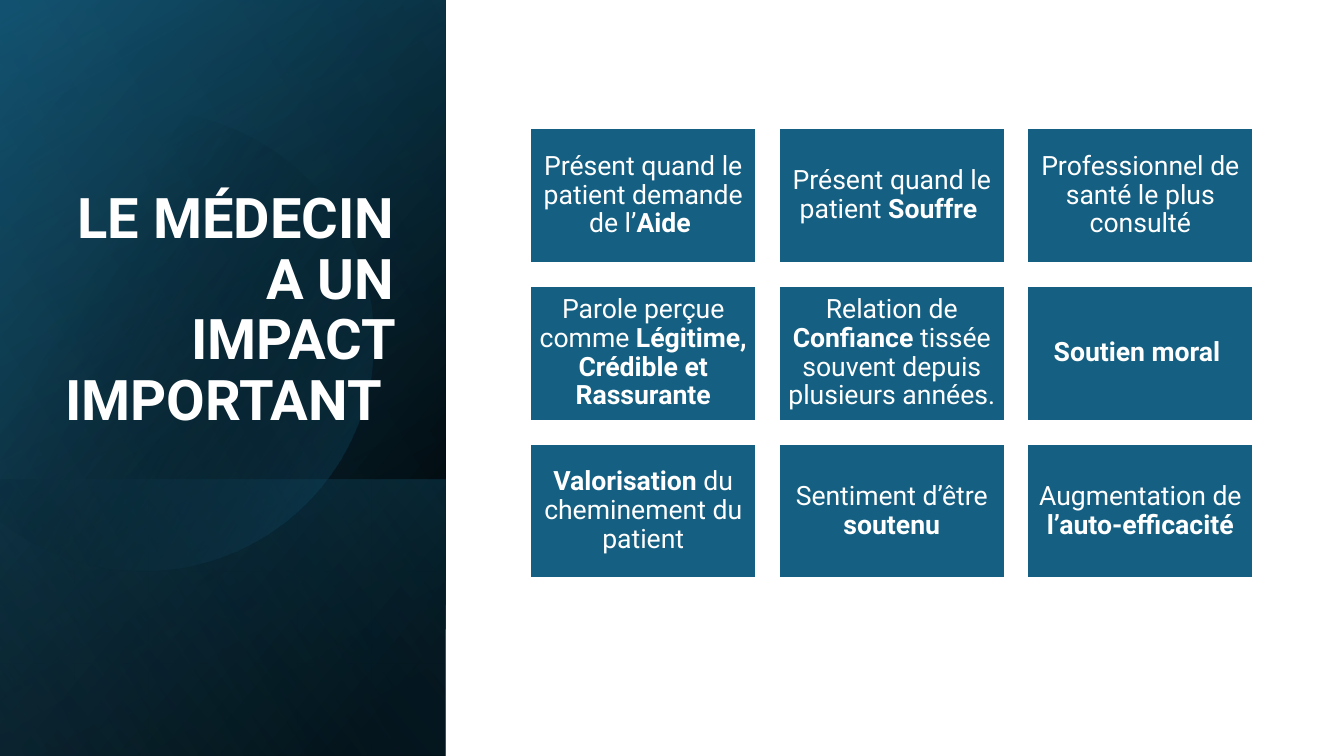
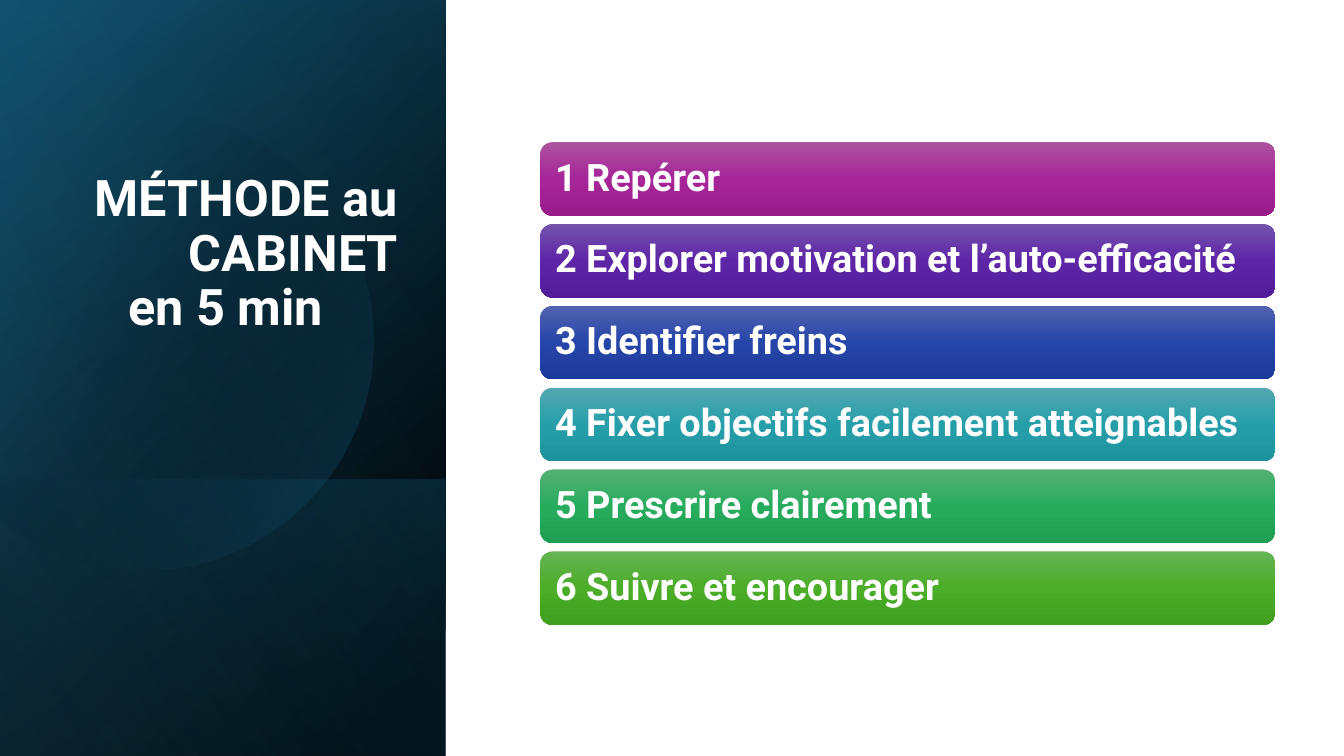
import math
from dataclasses import dataclass

from pptx import Presentation
from pptx.dml.color import RGBColor
from pptx.enum.shapes import MSO_SHAPE
from pptx.enum.text import MSO_ANCHOR, MSO_AUTO_SIZE, PP_ALIGN
from pptx.oxml import parse_xml
from pptx.oxml.ns import nsdecls
from pptx.util import Inches, Pt

RECTANGLE = MSO_SHAPE.RECTANGLE
ROUNDED = MSO_SHAPE.ROUNDED_RECTANGLE
MIDDLE = MSO_ANCHOR.MIDDLE
BOTTOM = MSO_ANCHOR.BOTTOM
NO_AUTOFIT = MSO_AUTO_SIZE.NONE
LEFT, CENTER, RIGHT = PP_ALIGN.LEFT, PP_ALIGN.CENTER, PP_ALIGN.RIGHT
TITLE_ONLY = 5


@dataclass(frozen=True)
class Theme:
    font: str = "Roboto"
    white: str = "FFFFFF"
    black: str = "000000"
    teal: str = "156082"
    deep_teal: str = "104862"
    sky: str = "46B1E1"
    impact_title: int = 40
    method_title: int = 36
    card_size: int = 19
    step_size: int = 27
    line_spacing: float = 0.9


THEME = Theme()
PAGE_WIDTH, PAGE_HEIGHT = 13.33, 7.5
PANEL_WIDTH = 4.42

BASE_BANDS = [
    (7.5, [(8, THEME.black, 100), (100, THEME.deep_teal, 100)], 50),
    (7.5, [(0, THEME.black, 0), (99, THEME.teal, 46)], 30),
    (2.74, [(2, THEME.teal, 29), (100, THEME.black, 30)], 130),
]
TOP_BAND = (7.5, [(0, THEME.black, 0), (99, THEME.sky, 11)], 120)
DISC_STOPS = [(29, THEME.black, 0), (100, THEME.teal, 43)]
DISC_CENTER, DISC_RADIUS = (1.42, 3.38), 2.28

CARDS = [
    [("Présent quand le patient demande de l’", False), ("Aide ", True)],
    [("Présent quand le patient ", False), ("Souffre ", True)],
    [("Professionnel de santé le plus consulté", False)],
    [("Parole perçue comme ", False), ("Légitime, Crédible et Rassurante", True)],
    [("Relation de ", False), ("Confiance", True),
     (" tissée souvent depuis plusieurs années.", False)],
    [("Soutien moral ", True)],
    [("Valorisation", True), (" du cheminement du patient", False)],
    [("Sentiment d’être ", False), ("soutenu", True)],
    [("Augmentation de ", False), ("l’auto-efficacité", True)],
]
STEPS = [
    ("1 Repérer", ("AC53A0", "A62598", "991C8B")),
    ("2 Explorer motivation et l’auto-efficacité", ("7353AD", "5E26A7", "531C9A")),
    ("3 Identifier freins", ("5363AF", "2645A9", "1D3B9B")),
    ("4 Fixer objectifs facilement atteignables", ("53A7B0", "279FAA", "1D929D")),
    ("5 Prescrire clairement", ("54B173", "27AC5E", "1E9E52")),
    ("6 Suivre et encourager", ("66B354", "4BAD28", "409F1E")),
]


def apply_format(target, values):
    for name, value in values.items():
        setattr(target, name, value)


def fill_gradient(shape, stops, angle):
    marks = "".join(
        f'<a:gs pos="{position * 1000}"><a:srgbClr val="{color}">'
        f'<a:alpha val="{opacity * 1000}"/></a:srgbClr></a:gs>'
        for position, color, opacity in stops
    )
    gradient = parse_xml(
        f'<a:gradFill {nsdecls("a")} rotWithShape="1"><a:gsLst>{marks}</a:gsLst>'
        f'<a:lin ang="{angle * 60000}" scaled="0"/></a:gradFill>'
    )
    shape.element.spPr.xfrm.getnext().addnext(gradient)
    shape.line.fill.background()
    shape.shadow.inherit = False


def add_box(page, kind, left, top, width, height):
    box = page.shapes.add_shape(
        kind, Inches(left), Inches(top), Inches(width), Inches(height)
    )
    box.shadow.inherit = False
    return box


def set_frame(frame, anchor, side, vertical):
    apply_format(frame, {
        "word_wrap": True,
        "auto_size": NO_AUTOFIT,
        "vertical_anchor": anchor,
        "margin_left": Inches(side),
        "margin_right": Inches(side),
        "margin_top": Inches(vertical),
        "margin_bottom": Inches(vertical),
    })


def write_spans(para, spans, size, alignment):
    apply_format(para, {
        "alignment": alignment,
        "line_spacing": THEME.line_spacing,
        "space_before": Pt(0),
    })
    for text, bold in spans:
        span = para.add_run()
        span.text = text
        apply_format(span.font, {"name": THEME.font, "size": Pt(size), "bold": bold})
        span.font.color.rgb = RGBColor.from_string(THEME.white)


def add_band(page, height, stops, angle):
    left = (PANEL_WIDTH - height) / 2
    top = PAGE_HEIGHT - (height + PANEL_WIDTH) / 2
    band = add_box(page, RECTANGLE, left, top, height, PANEL_WIDTH)
    band.rotation = 90
    band.element.spPr.xfrm.set("flipH", "1")
    fill_gradient(band, stops, angle)


def add_disc(page):
    center_x, center_y = DISC_CENTER
    limit = math.acos(-center_x / DISC_RADIUS)
    count = 120
    angles = [limit * (2 * index / count - 1) for index in range(count + 1)]
    points = [
        (Inches(center_x + DISC_RADIUS * math.cos(angle)),
         Inches(center_y + DISC_RADIUS * math.sin(angle)))
        for angle in angles
    ]
    builder = page.shapes.build_freeform(*points[0])
    builder.add_line_segments(points[1:], close=True)
    fill_gradient(builder.convert_to_shape(), DISC_STOPS, 30)


def add_page(deck, title_place, title_lines, size):
    page = deck.slides.add_slide(deck.slide_layouts[TITLE_ONLY])
    for band in BASE_BANDS:
        add_band(page, *band)
    add_disc(page)
    add_band(page, *TOP_BAND)

    title = page.shapes.title
    page.shapes.element.append(title.element)
    names = ("left", "top", "width", "height")
    apply_format(title, dict(zip(names, map(Inches, title_place))))
    frame = title.text_frame
    set_frame(frame, BOTTOM, 0.1, 0.05)
    for index, (text, alignment, indent) in enumerate(title_lines):
        para = frame.add_paragraph() if index else frame.paragraphs[0]
        if indent:
            properties = para._p.get_or_add_pPr()
            properties.set("marL", str(Inches(indent)))
            properties.set("indent", "0")
        write_spans(para, [(text, True)], size, alignment)
    return page


def add_card(page, left, top, width, height, spans):
    card = add_box(page, RECTANGLE, left, top, width, height)
    card.fill.solid()
    card.fill.fore_color.rgb = RGBColor.from_string(THEME.teal)
    card.line.color.rgb = RGBColor.from_string(THEME.white)
    card.line.width = Pt(1.5)
    set_frame(card.text_frame, MIDDLE, 0.08, 0.08)
    write_spans(card.text_frame.paragraphs[0], spans, THEME.card_size, CENTER)


def add_step(page, left, top, width, height, text, colors):
    step = add_box(page, ROUNDED, left, top, width, height)
    stops = [(position, color, 100) for position, color in zip((0, 50, 100), colors)]
    fill_gradient(step, stops, 90)
    set_frame(step.text_frame, MIDDLE, 0.11, 0.11)
    write_spans(step.text_frame.paragraphs[0], [(text, True)], THEME.step_size, LEFT)


def add_impact_page(deck):
    page = add_page(
        deck, (0.51, 0.64, 3.5, 3.7),
        [("LE MÉDECIN A UN IMPACT IMPORTANT ", RIGHT, 0)], THEME.impact_title,
    )
    columns, left, right, top = 3, 5.26, 12.43, 1.27
    width, height = 2.24, 1.34
    gap = (right - left - columns * width) / (columns - 1)
    for index, spans in enumerate(CARDS):
        row, column = divmod(index, columns)
        add_card(page, left + column * (width + gap), top + row * (height + gap),
                 width, height, spans)


def add_method_page(deck):
    page = add_page(
        deck, (0.64, 1.5, 3.41, 1.89),
        [("MÉTHODE au CABINET", RIGHT, 0), ("en 5 min", LEFT, 0.53)],
        THEME.method_title,
    )
    left, top, bottom, width, height = 5.36, 1.41, 6.2, 7.29, 0.73
    pitch = (bottom - top - height) / (len(STEPS) - 1)
    for index, (text, colors) in enumerate(STEPS):
        add_step(page, left, top + index * pitch, width, height, text, colors)


def main():
    deck = Presentation()
    deck.slide_width = Inches(PAGE_WIDTH)
    deck.slide_height = Inches(PAGE_HEIGHT)
    add_impact_page(deck)
    add_method_page(deck)
    deck.save("out.pptx")


if __name__ == "__main__":
    main()
